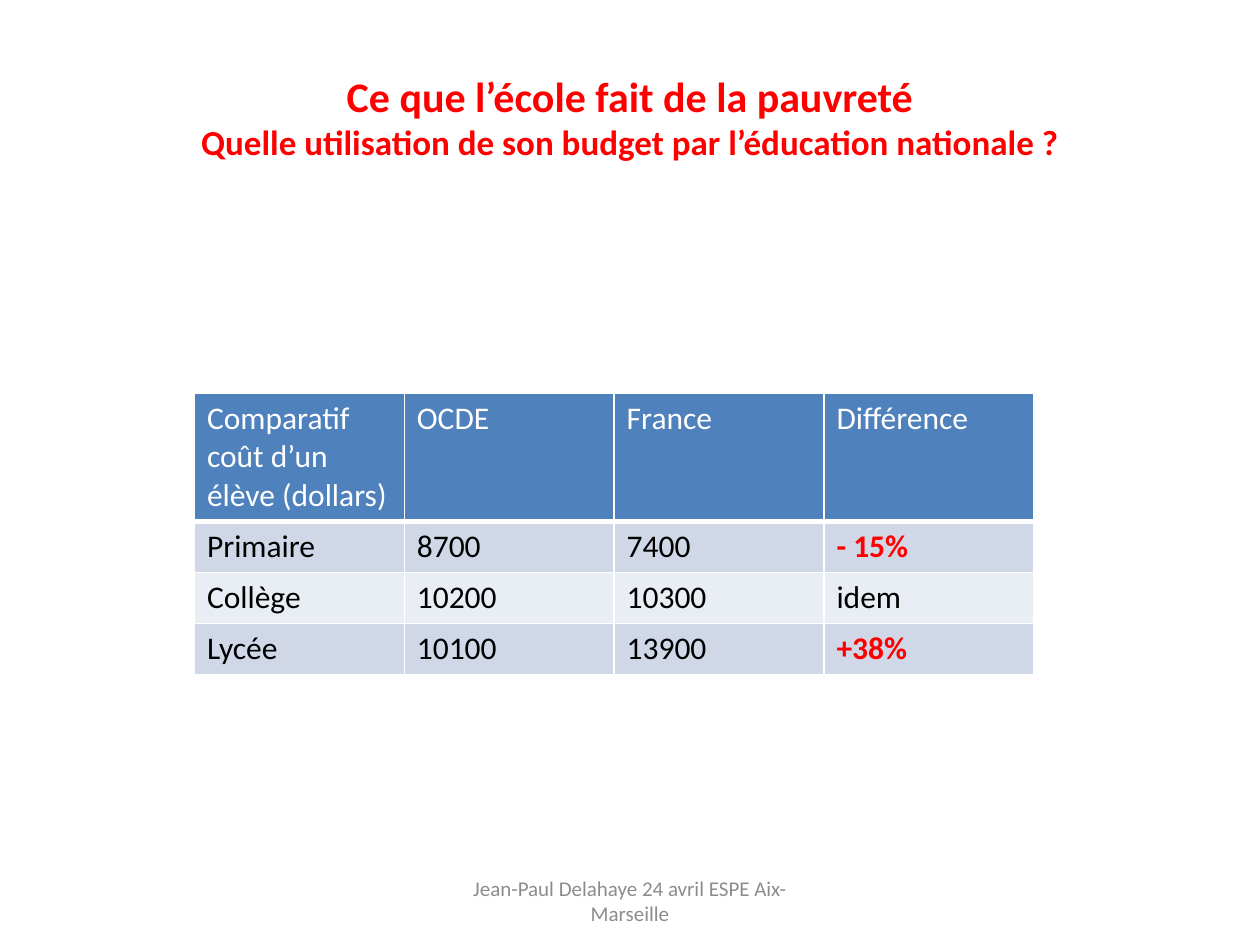
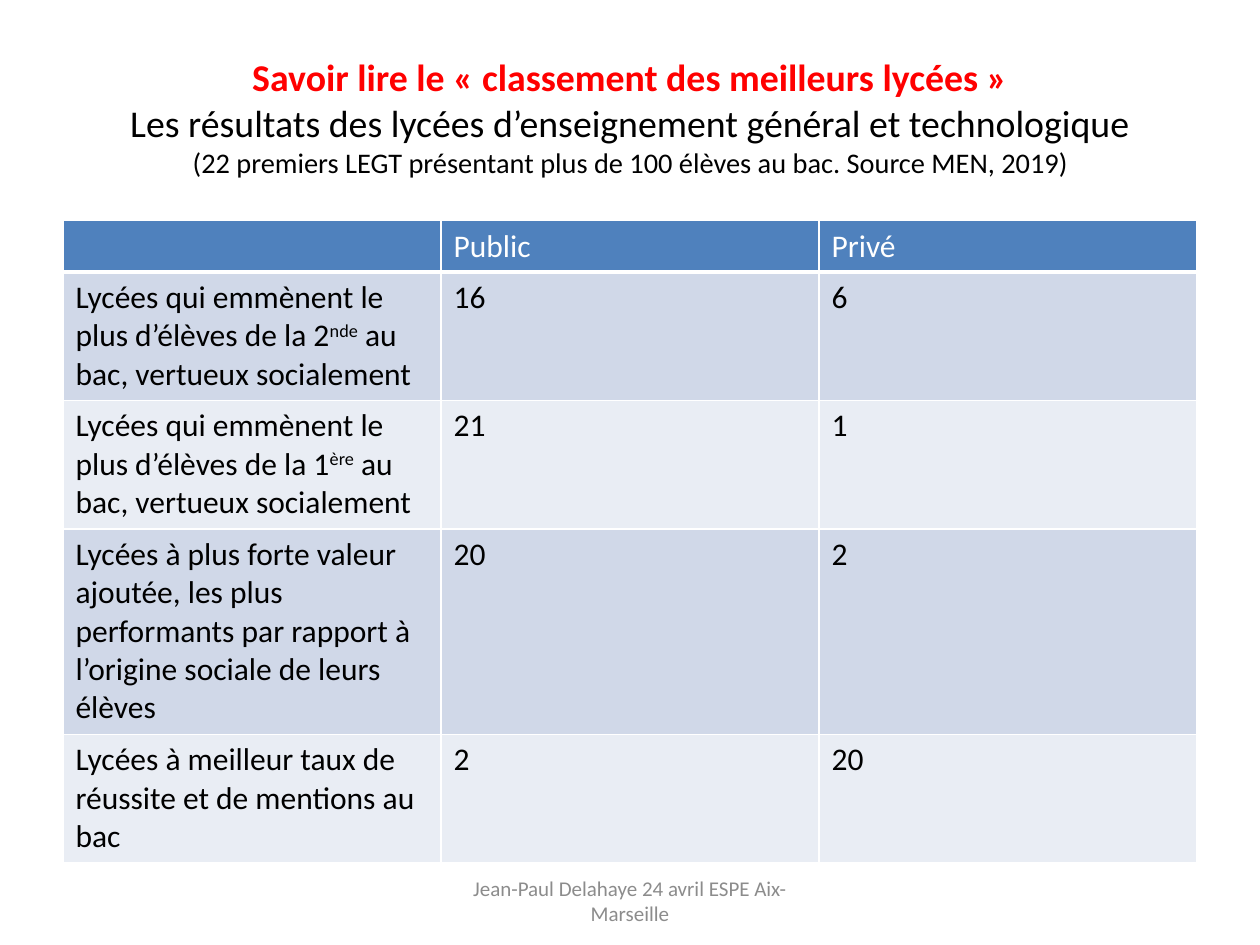
from lxml import etree
from pptx import Presentation
from pptx import util as u
from pptx.dml import color
from pptx.enum import text
from pptx.oxml import ns

FONT = "Calibri"
RED, BLACK, WHITE, GREY = "FF0000", "000000", "FFFFFF", "8C8C8C"
HEADER, BANDS = "4F81BD", ("D0D8E8", "E9EDF4")
FOOTER = "Jean-Paul Delahaye 24 avril ESPE Aix-Marseille"


def rgb(value):
    return color.RGBColor.from_string(value)


class Deck:
    """Holds the shared style and the current slide."""

    def __init__(self):
        self.prs = Presentation()
        self.prs.slide_width, self.prs.slide_height = u.Cm(25.4), u.Cm(19.05)
        self.s = None

    def slide(self):
        self.s = self.prs.slides.add_slide(self.prs.slide_layouts[6])

    def style(self, r, size, hue, bold=False):
        r.font.name, r.font.size, r.font.bold = FONT, u.Pt(size), bold
        r.font.color.rgb = rgb(hue)

    def box(self, left, top, width, height, lines):
        sp = self.s.shapes.add_textbox(*map(u.Cm, (left, top, width, height)))
        tf = sp.text_frame
        tf.word_wrap = True
        tf.vertical_anchor = text.MSO_ANCHOR.MIDDLE
        p = tf.paragraphs[0]
        p.text = "\v".join(line[0] for line in lines)
        p.alignment = text.PP_ALIGN.CENTER
        for r, (_, *look) in zip(p.runs, lines):
            self.style(r, *look)

    def title(self, *lines):
        self.box(1.27, 0.76, 22.86, 3.18, lines)

    def footer(self):
        self.box(8.68, 17.65, 8.04, 1.02, [(FOOTER, 12, GREY)])

    def borders(self, cell, bottom):
        tc_pr = cell._tc.get_or_add_tcPr()
        for i, (side, width) in enumerate(zip("LRTB", (1, 1, 1, bottom))):
            ln = etree.Element(ns.qn(f"a:ln{side}"), w=str(u.Pt(width)))
            fill = etree.SubElement(ln, ns.qn("a:solidFill"))
            etree.SubElement(fill, ns.qn("a:srgbClr"), val=WHITE)
            tc_pr.insert(i, ln)

    def cell(self, cell, content, row, alert):
        header = row == 0
        cell.fill.solid()
        cell.fill.fore_color.rgb = rgb(HEADER if header else BANDS[(row - 1) % 2])
        self.borders(cell, 3 if header else 1)
        hue = WHITE if header else RED if alert else BLACK
        p = cell.text_frame.paragraphs[0]
        for i, part in enumerate(content.split("^") if content else ()):
            r = p.add_run()
            r.text = part
            self.style(r, 18, hue, alert)
            if i % 2:
                r.font._element.set("baseline", "30000")

    def table(self, left, top, col_width, rows, line_counts, alerts=()):
        """Draw a banded table; text between ^ marks is raised."""
        cols = len(rows[0])
        heights = [u.Cm(0.25 + 0.78 * n) for n in line_counts]
        tbl = self.s.shapes.add_table(
            len(rows), cols, u.Cm(left), u.Cm(top),
            u.Cm(col_width * cols), sum(heights)).table
        for col in tbl.columns:
            col.width = u.Cm(col_width)
        for i, (row, height) in enumerate(zip(rows, heights)):
            tbl.rows[i].height = height
            for j, content in enumerate(row):
                self.cell(tbl.cell(i, j), content, i, content in alerts)


def main():
    deck = Deck()

    deck.slide()
    deck.title(
        ("Ce que l’école fait de la pauvreté", 24, RED, True),
        ("Quelle utilisation de son budget par l’éducation nationale ?", 20, RED, True))
    deck.footer()
    deck.table(3.92, 7.92, 4.23, [
        ("Comparatif coût d’un élève (dollars)", "OCDE", "France", "Différence"),
        ("Primaire", "8700", "7400", "- 15%"),
        ("Collège", "10200", "10300", "idem"),
        ("Lycée", "10100", "13900", "+38%"),
    ], (3, 1, 1, 1), alerts=("- 15%", "+38%"))

    deck.slide()
    deck.title(
        ("Savoir lire le « classement des meilleurs lycées »", 21.6, RED, True),
        ("Les résultats des lycées d’enseignement général et technologique", 21.6, BLACK),
        ("(22 premiers LEGT présentant plus de 100 élèves au bac. Source MEN, 2019)",
         16.2, BLACK))
    deck.table(1.27, 4.45, 7.62, [
        ("", "Public", "Privé"),
        ("Lycées qui emmènent le plus d’élèves de la 2^nde^ au bac, vertueux socialement",
         "16", "6"),
        ("Lycées qui emmènent le plus d’élèves de la 1^ère^ au bac, vertueux socialement",
         "21", "1"),
        ("Lycées à plus forte valeur ajoutée, les plus performants par rapport à "
         "l’origine sociale de leurs élèves", "20", "2"),
        ("Lycées à meilleur taux de réussite et de mentions au bac", "2", "20"),
    ], (1, 3, 3, 5, 3))
    deck.footer()

    deck.prs.save("out.pptx")


if __name__ == "__main__":
    main()
